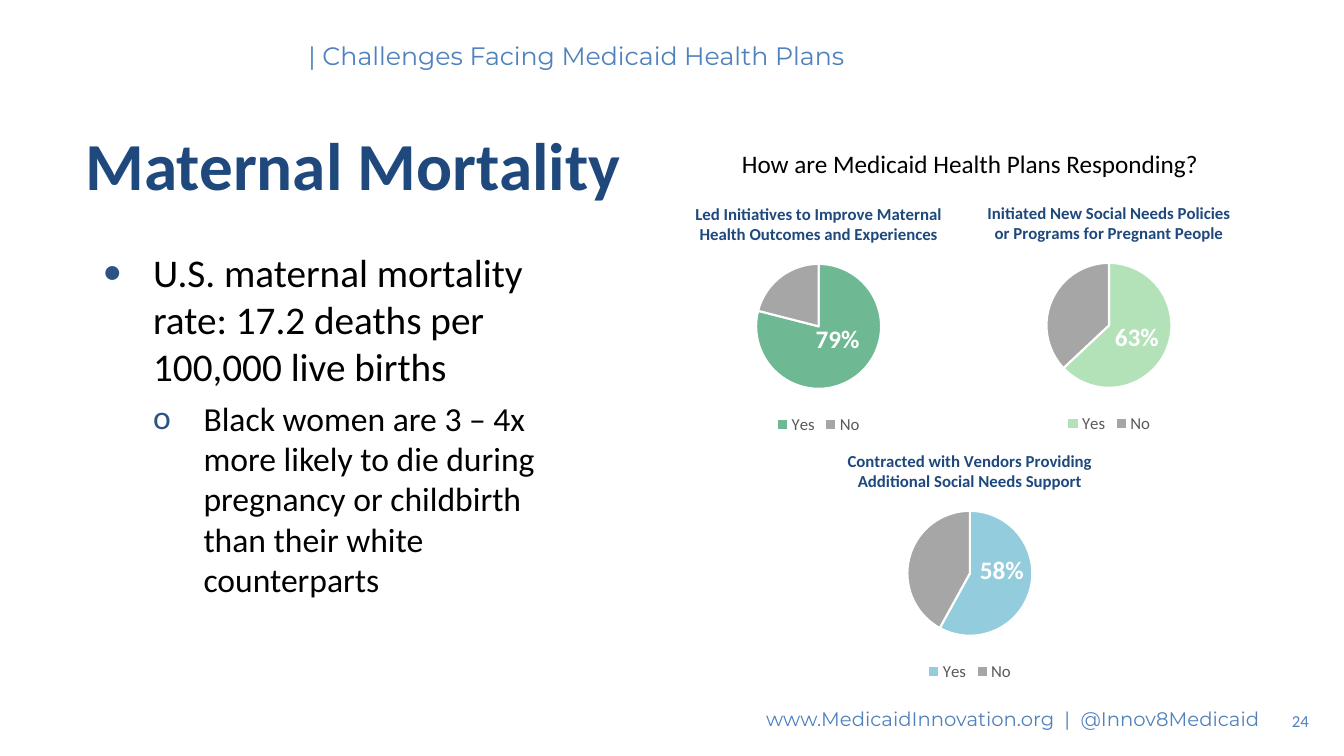
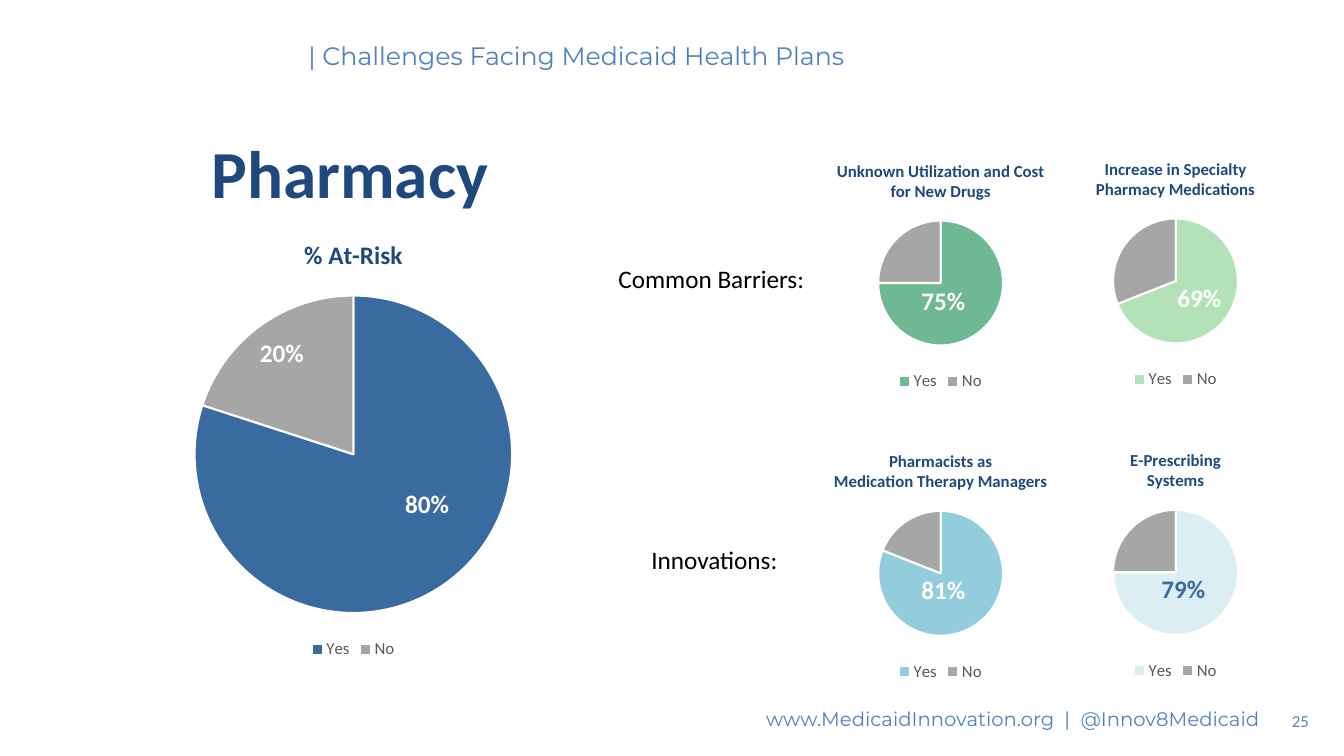
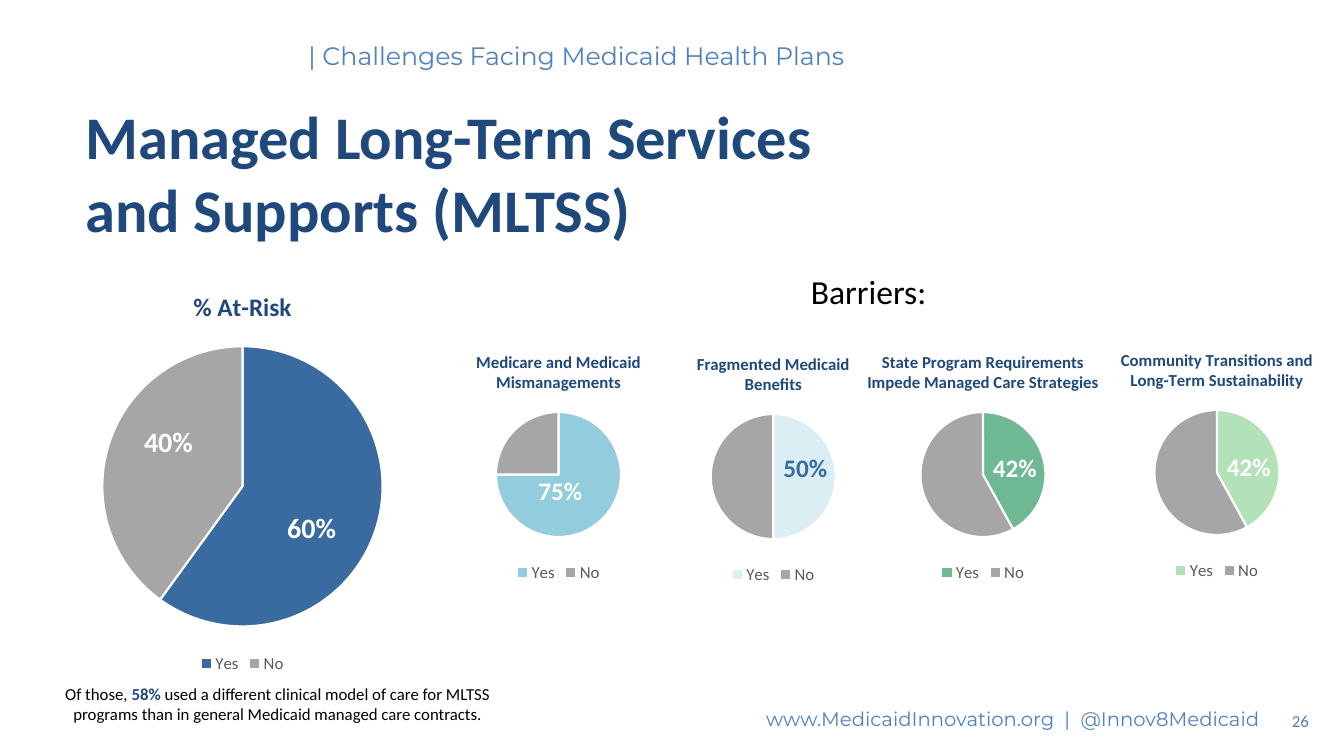
"""Build three slides on challenges facing Medicaid health plans."""
from lxml import etree
from pptx import Presentation
from pptx.chart import data
from pptx.dml.color import RGBColor
from pptx.enum import chart as kinds, text as modes
from pptx.oxml import ns, parse_xml
from pptx.util import Inches, Pt

NAVY = RGBColor(0x1F, 0x49, 0x7D)
SKY = RGBColor(0x4F, 0x81, 0xBD)
BLUE = RGBColor(0x3A, 0x6B, 0xA0)
GREEN = RGBColor(0x6E, 0xB8, 0x93)
MINT = RGBColor(0xB4, 0xE2, 0xB8)
AQUA = RGBColor(0x93, 0xCD, 0xDD)
ICE = RGBColor(0xDB, 0xEE, 0xF4)
GRAY = RGBColor(0xA6, 0xA6, 0xA6)
DARK = RGBColor(0x59, 0x59, 0x59)
WHITE = RGBColor(0xFF, 0xFF, 0xFF)
BLACK = RGBColor(0, 0, 0)
BODY, HEAD = "Calibri", "Montserrat"
LEFT, MID, RIGHT = modes.PP_ALIGN.LEFT, modes.PP_ALIGN.CENTER, modes.PP_ALIGN.RIGHT
TOP, CORE = modes.MSO_ANCHOR.TOP, modes.MSO_ANCHOR.MIDDLE
SMALL = (3.18, 2.47)


def style(font, size, color, bold=False, face=BODY):
    """Set the face, size, colour and weight of a font."""
    font.name, font.size, font.bold = face, Pt(size), bold
    font.color.rgb = color


def add_run(para, words, size, color=BLACK, bold=False, face=BODY):
    """Add one styled run to a paragraph."""
    run = para.add_run()
    run.text = words
    style(run.font, size, color, bold, face)


def add_box(slide, box, align=LEFT, anchor=TOP):
    """Add a wrapping text box and return its frame."""
    frame = slide.shapes.add_textbox(*map(Inches, box)).text_frame
    frame.word_wrap = True
    frame.vertical_anchor = anchor
    frame.paragraphs[0].alignment = align
    return frame


def add_line(slide, box, words, size, color=BLACK, bold=False, face=BODY,
             align=LEFT, anchor=TOP):
    """Add a text box that holds a single run."""
    frame = add_box(slide, box, align, anchor)
    add_run(frame.paragraphs[0], words, size, color, bold, face)


def fill_lines(frame, lines, size, color):
    """Write bold lines, one paragraph each."""
    for i, words in enumerate(lines):
        para = frame.add_paragraph() if i else frame.paragraphs[0]
        add_run(para, words, size, color, True)


def add_slide(deck, page, lines, box, size=48):
    """Add a slide with header, title, footer and page number."""
    slide = deck.slides.add_slide(deck.slide_layouts[6])
    fill_lines(add_box(slide, box, anchor=CORE), lines, size, NAVY)
    add_line(slide, (2.96, 0.35, 6.12, 0.4),
             "| Challenges Facing Medicaid Health Plans", 18, SKY, face=HEAD)
    add_line(slide, (7.5, 6.96, 5.17, 0.57),
             "www.MedicaidInnovation.org  |  @Innov8Medicaid", 14, SKY, face=HEAD)
    add_line(slide, (9.97, 6.95, 3.11, 0.4), str(page), 12, SKY,
             align=RIGHT, anchor=CORE)
    return slide


def add_bullet(para, mark, level, words, size):
    """Write a bulleted paragraph with a hanging indent."""
    para.level = level
    para.space_after = Pt(6)
    props = para._p.get_or_add_pPr()
    props.set("marL", str(Inches(0.5 * (level + 1))))
    props.set("indent", str(Inches(-0.5)))
    color = etree.SubElement(props, ns.qn("a:buClr"))
    etree.SubElement(color, ns.qn("a:srgbClr"), val="2B5384")
    etree.SubElement(props, ns.qn("a:buFont"), typeface=BODY)
    etree.SubElement(props, ns.qn("a:buChar"), char=mark)
    add_run(para, words, size)


def set_plot(chart, wide, high, across, mid):
    """Fix the pie's diameter and centre, and clear the chart's ground."""
    area = chart.element.chart.plotArea
    for old in area.findall(ns.qn("c:layout")):
        area.remove(old)
    layout = etree.Element(ns.qn("c:layout"))
    manual = etree.SubElement(layout, ns.qn("c:manualLayout"))
    w, h = across / wide, across / high
    marks = dict(layoutTarget="inner", xMode="edge", yMode="edge",
                 x=0.5 - w / 2, y=mid - h / 2, w=w, h=h)
    for key, val in marks.items():
        etree.SubElement(manual, ns.qn("c:" + key), val=str(val))
    area.insert(0, layout)
    clear = parse_xml(f"<c:spPr {ns.nsdecls('c', 'a')}><a:noFill/>"
                      "<a:ln><a:noFill/></a:ln></c:spPr>")
    chart.element.find(ns.qn("c:txPr")).addprevious(clear)


def add_pie(slide, spot, lines, yes, tint, size=SMALL, across=1.24, mid=0.55, points=12):
    """Add a yes/no pie with a title and a legend below."""
    values = data.CategoryChartData()
    values.categories = ["Yes", "No"]
    values.add_series("Series 1", (yes, 100 - yes))
    chart = slide.shapes.add_chart(
        kinds.XL_CHART_TYPE.PIE, *map(Inches, spot + size), values).chart
    style(chart.font, 10, BLACK)
    chart.has_title = True
    chart.chart_title.include_in_layout = False
    fill_lines(chart.chart_title.text_frame, lines, points, NAVY)
    chart.has_legend = True
    chart.legend.position = kinds.XL_LEGEND_POSITION.BOTTOM
    chart.legend.include_in_layout = False
    style(chart.legend.font, 12, DARK)
    plot = chart.plots[0]
    plot.vary_by_categories = True
    for i, color in enumerate((tint, GRAY)):
        part = plot.series[0].points[i].format
        part.fill.solid()
        part.fill.fore_color.rgb = color
        part.line.color.rgb = WHITE
        part.line.width = Pt(1.5)
    set_plot(chart, *size, across, mid)


def add_tags(slide, tags, size=18):
    """Place percent labels given as left, top, words and colour."""
    for x, y, words, color in tags:
        add_line(slide, (x, y, 0.75, 0.4), words, size, color, True)


def add_pies(slide, pies):
    """Add small pies given as spot, title lines, value and tint."""
    for pie in pies:
        add_pie(slide, *pie)


def show_births(deck):
    """Build the maternal mortality slide."""
    slide = add_slide(deck, 24, ["Maternal Mortality"], (0.75, 1, 11.92, 1.25))
    frame = add_box(slide, (0.92, 2.41, 4.58, 4.17))
    add_bullet(frame.paragraphs[0], "•", 0,
               "U.S. maternal mortality rate: 17.2 deaths per 100,000 live births", 28)
    add_bullet(frame.add_paragraph(), "o", 1,
               "Black women are 3 – 4x more likely to die during pregnancy or "
               "childbirth than their white counterparts", 24)
    add_line(slide, (7.25, 1.42, 4.74, 0.4),
             "How are Medicaid Health Plans Responding?", 18, align=MID)
    add_pies(slide, [
        ((9.41, 1.87), ["Initiated New Social Needs Policies",
                        "or Programs for Pregnant People"], 63, MINT),
        ((6.53, 1.88), ["Led Initiatives to Improve Maternal",
                        "Health Outcomes and Experiences"], 79, GREEN),
        ((8.03, 4.33), ["Contracted with Vendors Providing",
                        "Additional Social Needs Support"], 58, AQUA)])
    add_tags(slide, [(7.99, 3.16, "79%", WHITE), (10.96, 3.14, "63%", WHITE),
                     (9.62, 5.45, "58%", WHITE)])


def show_drugs(deck):
    """Build the pharmacy slide."""
    slide = add_slide(deck, 25, ["Pharmacy"], (2, 1.08, 10.67, 1.25))
    add_pie(slide, (0.67, 2.17), ["% At-Risk"], 80, BLUE, (5.67, 4.41), 3.15, 0.53, 18)
    add_pies(slide, [
        ((10.07, 1.43), ["Increase in Specialty", "Pharmacy Medications"], 69, MINT),
        ((7.74, 1.45), ["Unknown Utilization and Cost", "for New Drugs"], 75, GREEN),
        ((10.07, 4.32), ["E-Prescribing", "Systems"], 75, ICE),
        ((7.74, 4.33), ["Pharmacists as", "Medication Therapy Managers"], 81, AQUA)])
    add_line(slide, (5.15, 2.56, 3.81, 0.4), "Common Barriers:", 18, align=MID)
    add_line(slide, (5.18, 5.35, 3.81, 0.4), "Innovations:", 18, align=MID)
    add_tags(slide, [(3.92, 4.8, "80%", WHITE), (2.48, 3.3, "20%", WHITE),
                     (9.04, 2.78, "75%", WHITE), (11.58, 2.75, "69%", WHITE),
                     (9.04, 5.65, "81%", WHITE), (11.42, 5.64, "79%", BLUE)])


def show_care(deck):
    """Build the long-term services slide."""
    slide = add_slide(deck, 26, ["Managed Long-Term Services", "and Supports (MLTSS)"],
                      (0.75, 1.08, 11.92, 1.25), 43.2)
    add_pie(slide, (-0.19, 2.69), ["% At-Risk"], 60, BLUE, (5.19, 4.03), 2.78, 0.53, 18)
    add_pies(slide, [
        ((10.48, 3.33), ["Community Transitions and", "Long-Term Sustainability"], 42, MINT),
        ((8.16, 3.35), ["State Program Requirements",
                        "Impede Managed Care Strategies"], 42, GREEN),
        ((6.08, 3.37), ["Fragmented Medicaid", "Benefits"], 50, ICE),
        ((3.95, 3.35), ["Medicare and Medicaid", "Mismanagements"], 75, AQUA)])
    add_line(slide, (6.71, 2.64, 3.81, 0.5), "Barriers:", 24, align=MID)
    add_tags(slide, [(9.75, 4.44, "42%", WHITE), (12.07, 4.43, "42%", WHITE),
                     (5.24, 4.67, "75%", WHITE), (7.67, 4.44, "50%", BLUE)])
    add_tags(slide, [(1.33, 4.16, "40%", WHITE), (2.75, 5.02, "60%", WHITE)], 20)
    note = add_box(slide, (0.42, 6.73, 4.67, 0.5), MID).paragraphs[0]
    add_run(note, "Of those, ", 12)
    add_run(note, "58%", 12, NAVY, True)
    add_run(note, " used a different clinical model of care for MLTSS programs "
                  "than in general Medicaid managed care contracts.", 12)


def main():
    """Build and save the deck."""
    deck = Presentation()
    deck.slide_width, deck.slide_height = Inches(13.33), Inches(7.5)
    show_births(deck)
    show_drugs(deck)
    show_care(deck)
    deck.save("out.pptx")


if __name__ == "__main__":
    main()
